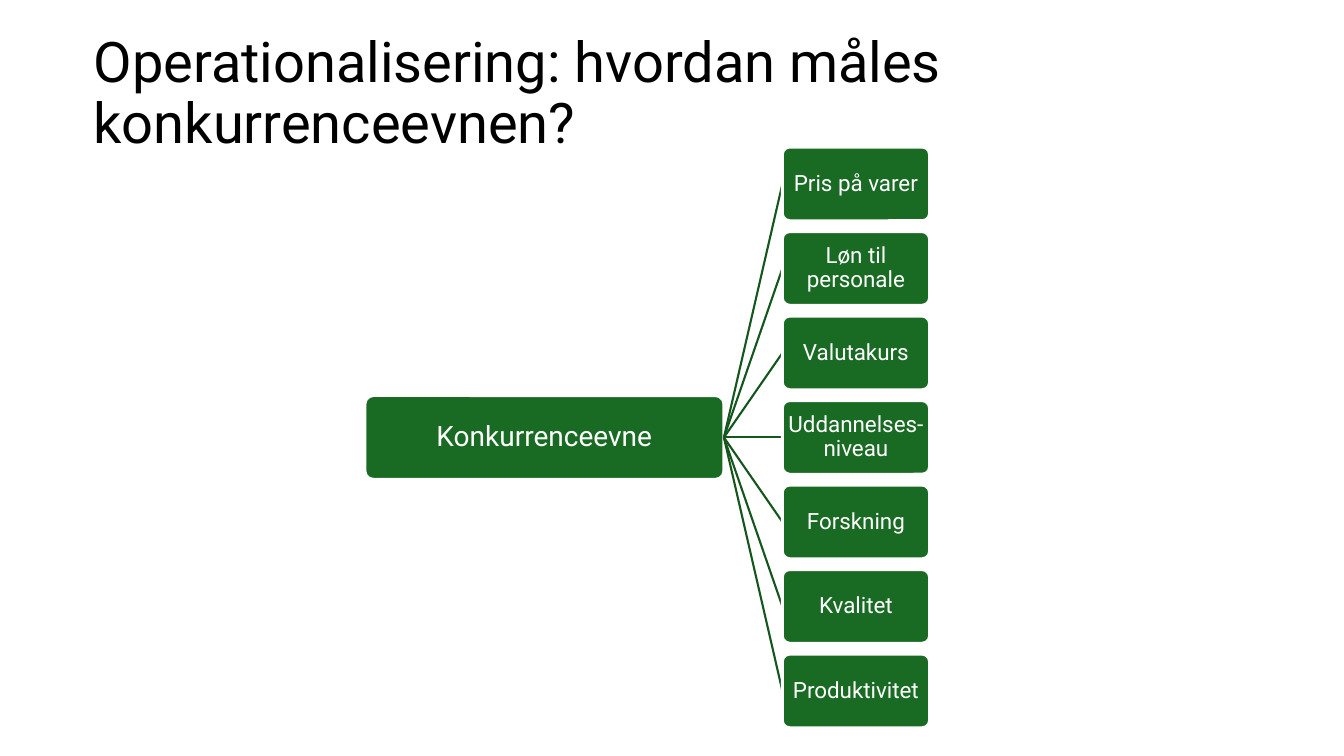
from lxml import etree
from pptx import Presentation
from pptx.dml.color import RGBColor
from pptx.enum.shapes import MSO_CONNECTOR, MSO_SHAPE
from pptx.enum.text import MSO_ANCHOR, PP_ALIGN
from pptx.oxml.ns import qn
from pptx.util import Inches, Pt

STRAIGHT = MSO_CONNECTOR.STRAIGHT
ROUNDED = MSO_SHAPE.ROUNDED_RECTANGLE
MIDDLE = MSO_ANCHOR.MIDDLE
LEFT, CENTER = PP_ALIGN.LEFT, PP_ALIGN.CENTER
LEFT_SIDE, RIGHT_SIDE = 1, 3

BLACK = RGBColor(0x00, 0x00, 0x00)
WHITE = RGBColor(0xFF, 0xFF, 0xFF)
GREEN = RGBColor(0x19, 0x6B, 0x24)
DARK_GREEN = RGBColor(0x14, 0x56, 0x1D)

FONT = "Roboto"
TITLE = "Operationalisering: hvordan måles konkurrenceevnen?"
CONCEPT = "Konkurrenceevne"
MEASURES = ["Pris på varer", "Løn til personale", "Valutakurs",
            "Uddannelses-niveau", "Forskning", "Kvalitet", "Produktivitet"]


def set_text(sp, text, size, color, align, inset_x, inset_y):
    tf = sp.text_frame
    frame_format = {"word_wrap": True, "vertical_anchor": MIDDLE,
                    "margin_left": Inches(inset_x), "margin_right": Inches(inset_x),
                    "margin_top": Inches(inset_y), "margin_bottom": Inches(inset_y)}
    for name, value in frame_format.items():
        setattr(tf, name, value)
    p = tf.paragraphs[0]
    p.alignment = align
    p.line_spacing = 0.9
    r = p.add_run()
    r.text = text
    for name, value in {"name": FONT, "size": Pt(size)}.items():
        setattr(r.font, name, value)
    r.font.color.rgb = color


def add_title(s, left, top, width, height):
    sp = s.shapes.add_textbox(Inches(left), Inches(top), Inches(width), Inches(height))
    set_text(sp, TITLE, 40, BLACK, LEFT, 0.1, 0.05)


def add_node(s, left, top, width, height, text, size):
    sp = s.shapes.add_shape(ROUNDED, Inches(left), Inches(top),
                            Inches(width), Inches(height))
    sp.adjustments[0] = 0.1
    sp.shadow.inherit = False
    sp.fill.solid()
    sp.fill.fore_color.rgb = GREEN
    sp.line.color.rgb = WHITE
    sp.line.width = Pt(2)
    set_text(sp, text, size, WHITE, CENTER, 0.01, 0.01)
    return sp


def add_branch(s, root):
    """Add a line from the right side of root; its far end is joined later."""
    line = s.shapes.add_connector(STRAIGHT, 0, 0, 0, 0)
    line.begin_connect(root, RIGHT_SIDE)
    line.line.color.rgb = DARK_GREEN
    line.line.width = Pt(1.5)
    etree.SubElement(line._element.spPr, qn("a:effectLst"))
    return line


def add_tree(s, left, top, width, height):
    """Place the concept at mid-height on the left and its measures on the right."""
    root_width, root_height = 3.56, 0.83
    leaf_width, leaf_height = 1.46, 0.73
    leaf_left = left + width - leaf_width
    step = (height - leaf_height) / (len(MEASURES) - 1)

    root = add_node(s, left, top + (height - root_height) / 2,
                    root_width, root_height, CONCEPT, 20)
    for i, measure in enumerate(MEASURES):
        branch = add_branch(s, root)
        leaf = add_node(s, leaf_left, top + i * step,
                        leaf_width, leaf_height, measure, 16)
        branch.end_connect(leaf, LEFT_SIDE)


def main():
    prs = Presentation()
    prs.slide_width, prs.slide_height = Inches(13.33), Inches(7.5)
    s = prs.slides.add_slide(prs.slide_layouts[6])
    add_title(s, 0.83, 0.27, 11.18, 1.34)
    add_tree(s, 3.62, 1.46, 5.6, 5.76)
    prs.save("out.pptx")


if __name__ == "__main__":
    main()
